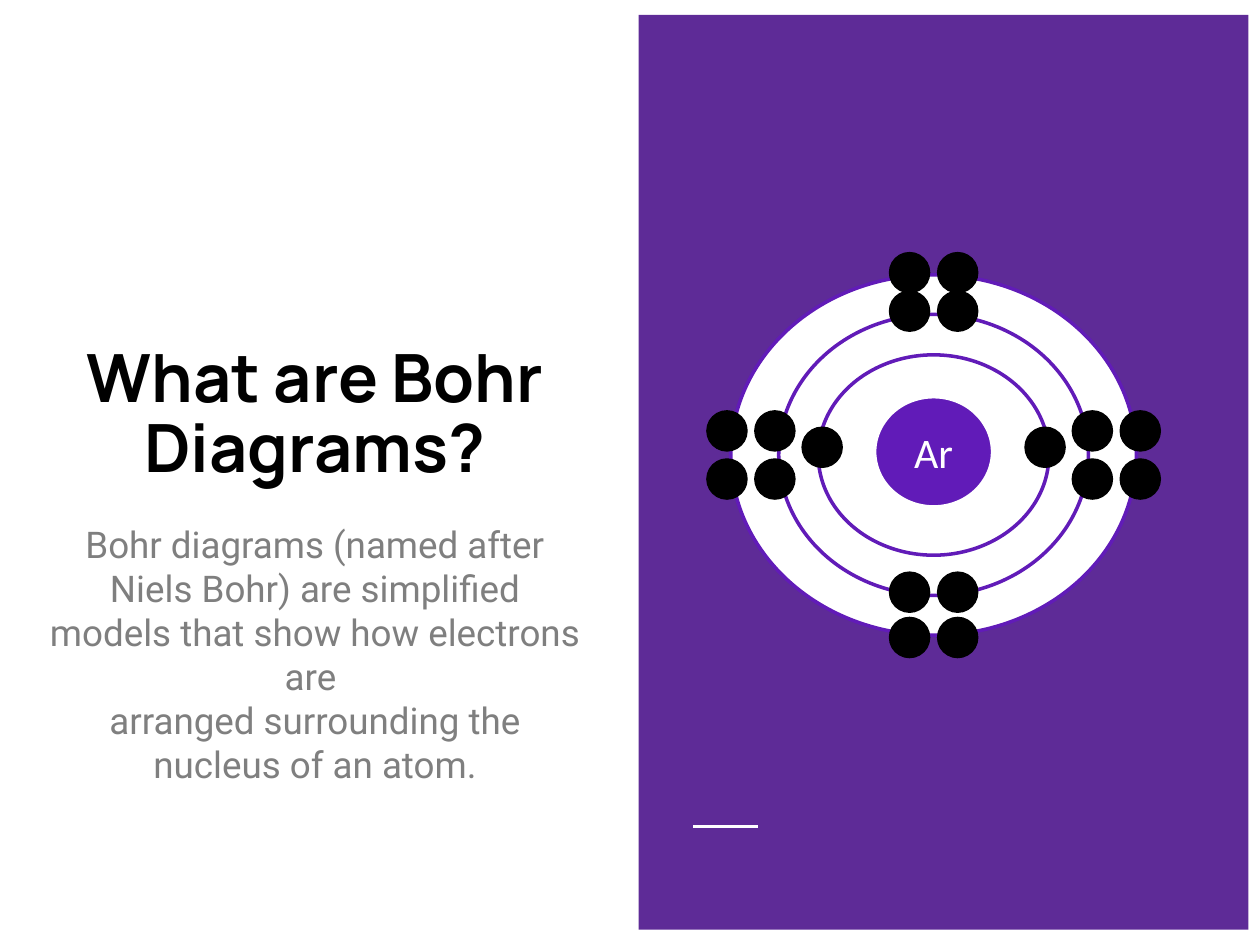
from pptx import Presentation
from pptx.dml.color import RGBColor
from pptx.enum.shapes import MSO_CONNECTOR, MSO_SHAPE as SHAPE
from pptx.enum.text import MSO_ANCHOR as ANCHOR, PP_ALIGN as ALIGN
from pptx.oxml.ns import qn
from pptx.util import Pt
from lxml import etree

PANEL = "5E2B97"
VIOLET = "611BB8"
WHITE = "FFFFFF"
BLACK = "000000"

TITLE = dict(name="Manrope", size=Pt(38), bold=True)
BODY = dict(name="Roboto", size=Pt(21))
SYMBOL = dict(name="Calibri", size=Pt(24))

RINGS = [(231.8, 206), (177, 160.6), (131.8, 114.5)]
NUCLEUS = (68.4, 64)
ELECTRON = 23
PAIR = 13.75  # half the distance between paired electrons
# Offsets from the centre: side pairs, top pair, bottom pair
SHELLS = [(90.7, -82.2, 78.4), (118.1, -104.2, 104.3)]


def rgb(color):
    return RGBColor.from_string(color)


def add_filled(s, kind, box, fill, line=None, width=0.75):
    sp = s.shapes.add_shape(kind, *map(Pt, box))
    sp.shadow.inherit = False
    sp.fill.solid()
    sp.fill.fore_color.rgb = rgb(fill)
    if line:
        sp.line.color.rgb = rgb(line)
        sp.line.width = Pt(width)
    else:
        sp.line.fill.background()
    return sp


def add_ellipse(s, cx, cy, size, fill, line, width=0.75):
    w, h = size
    box = (cx - w / 2, cy - h / 2, w, h)
    return add_filled(s, SHAPE.OVAL, box, fill, line, width)


def write(tf, paragraphs, font, color, anchor, spacing=None):
    tf.word_wrap = True
    tf.vertical_anchor = anchor
    for i, text in enumerate(paragraphs):
        p = tf.add_paragraph() if i else tf.paragraphs[0]
        p.alignment = ALIGN.CENTER
        p.line_spacing = spacing
        r = p.add_run()
        r.text = text
        r.font.color.rgb = rgb(color)
        for key, value in font.items():
            setattr(r.font, key, value)


def add_text(s, box, *args):
    tf = s.shapes.add_textbox(*map(Pt, box)).text_frame
    for side in ("left", "top", "right", "bottom"):
        setattr(tf, f"margin_{side}", Pt(7.2))
    write(tf, *args)


def add_definition(s, x, y, w, h):
    """Title above the explanation, in the left half."""
    title_h = 161.3
    add_text(s, (x, y, w, title_h), ["What are Bohr Diagrams?"],
             TITLE, BLACK, ANCHOR.BOTTOM, 0.87)
    body_y = y + title_h + 5.8
    add_text(s, (x, body_y, w, y + h - body_y),
             ["Bohr diagrams (named after Niels Bohr) are simplified models "
              "that show how electrons are ",
              "arranged surrounding the nucleus of an atom."],
             BODY, "7F7F7F", ANCHOR.TOP)


def add_panel(s, x, y, w, h):
    add_filled(s, SHAPE.RECTANGLE, (x, y, w, h), PANEL)
    rule_x, rule_y = x + 31, y + h - 59
    ln = s.shapes.add_connector(MSO_CONNECTOR.STRAIGHT, Pt(rule_x), Pt(rule_y),
                                Pt(rule_x + 37), Pt(rule_y))
    ln.line.color.rgb = rgb(WHITE)
    ln.line.width = Pt(1.5)
    etree.SubElement(ln._element.spPr, qn("a:effectLst"))


def electron_offsets():
    """Two electrons on the inner shell, four pairs on each outer one."""
    offsets = [(-63.7, -4.4), (63.7, -4.4)]
    for side, top, bottom in SHELLS:
        for sign in (-1, 1):
            offsets += [(sign * PAIR, top), (sign * PAIR, bottom),
                        (sign * side, -PAIR), (sign * side, PAIR)]
    return offsets


def add_atom(s, x, y, w, h):
    cx, cy = x + w / 2, y + h / 2
    for size in RINGS:
        add_ellipse(s, cx, cy, size, WHITE, VIOLET, 2)
    nucleus = add_ellipse(s, cx, cy - 1.8, NUCLEUS, VIOLET, WHITE, 3)
    write(nucleus.text_frame, ["Ar"], SYMBOL, WHITE, ANCHOR.MIDDLE)
    for dx, dy in electron_offsets():
        add_ellipse(s, cx + dx, cy + dy, (ELECTRON, ELECTRON), BLACK, BLACK)


def main():
    prs = Presentation()
    prs.slide_width, prs.slide_height = Pt(720), Pt(540)
    s = prs.slides.add_slide(prs.slide_layouts[6])
    add_panel(s, 365, 8.6, 348.5, 522.7)
    add_definition(s, 20.9, 123.8, 318.2, 308.2)
    add_atom(s, 417.6, 157, 231.8, 206)
    prs.save("out.pptx")


if __name__ == "__main__":
    main()
